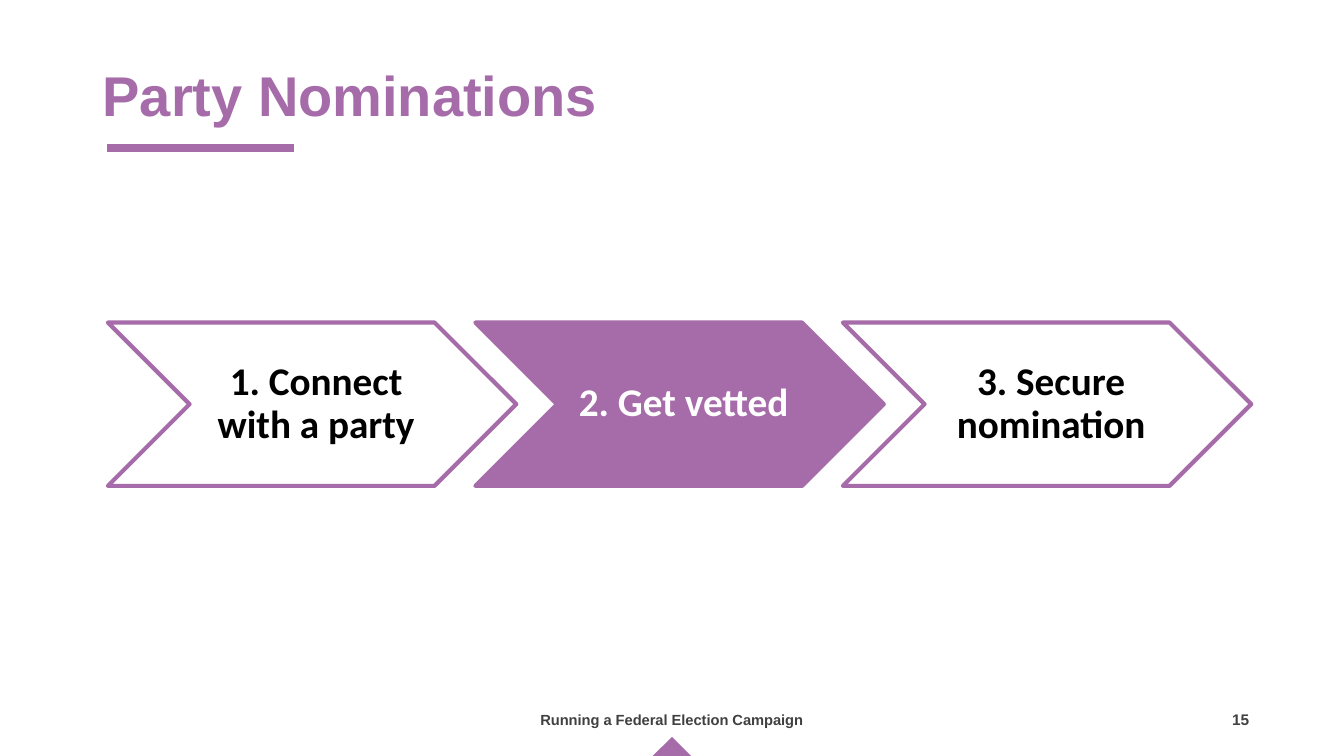
from dataclasses import dataclass

from pptx import Presentation
from pptx.dml.color import RGBColor
from pptx.enum.shapes import MSO_CONNECTOR, MSO_SHAPE
from pptx.enum.text import MSO_ANCHOR, PP_ALIGN
from pptx.oxml.ns import qn
from pptx.util import Inches, Pt

CHEVRON, TRIANGLE = MSO_SHAPE.CHEVRON, MSO_SHAPE.ISOSCELES_TRIANGLE
STRAIGHT = MSO_CONNECTOR.STRAIGHT
LEFT, CENTER = PP_ALIGN.LEFT, PP_ALIGN.CENTER
TOP, MIDDLE = MSO_ANCHOR.TOP, MSO_ANCHOR.MIDDLE


@dataclass(frozen=True)
class Theme:
    purple: RGBColor = RGBColor(0xA6, 0x6B, 0xA9)
    black: RGBColor = RGBColor(0, 0, 0)
    white: RGBColor = RGBColor(0xFF, 0xFF, 0xFF)
    grey: RGBColor = RGBColor(0x40, 0x40, 0x40)
    heading_font: str = "Arial"
    step_font: str = "Calibri"
    title_size: float = 40
    step_size: float = 28
    footer_size: float = 10.5
    number_size: float = 11
    rule_width: float = 6
    outline_width: float = 3


THEME = Theme()

STEPS = ["1. Connect with a party", "2. Get vetted", "3. Secure nomination"]
CURRENT_STEP = 1


def write(shape, text, font, size, color, align=CENTER, anchor=MIDDLE, spacing=1.0):
    """Put one bold paragraph into a shape or text box."""
    frame = shape.text_frame
    frame.word_wrap = True
    frame.vertical_anchor = anchor
    frame.text = text
    paragraph = frame.paragraphs[0]
    paragraph.alignment = align
    paragraph.line_spacing = spacing
    style = paragraph.runs[0].font
    style.name, style.size, style.bold = font, Pt(size), True
    style.color.rgb = color


def add_label(slide, box, text, size, color, **layout):
    label = slide.shapes.add_textbox(*map(Inches, box))
    write(label, text, THEME.heading_font, size, color, **layout)


def add_heading(slide, box, title):
    left, top, _, _ = box
    # Short rule under the title
    start, end, level = left + 0.14, left + 2, top + 1.07
    rule = slide.shapes.add_connector(
        STRAIGHT, Inches(start), Inches(level), Inches(end), Inches(level))
    rule.line.color.rgb = THEME.purple
    rule.line.width = Pt(THEME.rule_width)
    properties = rule._element.spPr
    properties.append(properties.makeelement(qn("a:effectLst"), {}))
    # Title
    add_label(slide, box, title, THEME.title_size, THEME.purple,
              align=LEFT, spacing=0.9)


def add_process(slide, box, steps, current):
    """Fill the box with chevrons, each overlapping the next by a tenth."""
    left, top, width, height = box
    step_width = width / (1 + 0.9 * (len(steps) - 1))
    for index, step in enumerate(steps):
        chevron = slide.shapes.add_shape(
            CHEVRON, Inches(left + index * 0.9 * step_width), Inches(top),
            Inches(step_width), Inches(height))
        chevron.shadow.inherit = False
        chevron.line.color.rgb = THEME.purple
        chevron.line.width = Pt(THEME.outline_width)
        # The current step is solid, the others are outlined
        if index == current:
            chevron.fill.solid()
            chevron.fill.fore_color.rgb = THEME.purple
        else:
            chevron.fill.background()
        frame = chevron.text_frame
        frame.margin_left = Inches(0.12)
        frame.margin_top = frame.margin_right = frame.margin_bottom = Inches(0.04)
        write(chevron, step, THEME.step_font, THEME.step_size,
              THEME.white if index == current else THEME.black, spacing=0.9)


def add_footer(slide, box, text, number):
    left, top, width, height = box
    # Campaign name and page number
    add_label(slide, (left + (width - 4.5) / 2, top, 4.5, 0.4), text,
              THEME.footer_size, THEME.grey)
    add_label(slide, (left + 11.85, top + 0.06, 0.91, 0.29), number,
              THEME.number_size, THEME.grey, anchor=TOP)
    # Marker on the bottom edge
    marker = slide.shapes.add_shape(
        TRIANGLE, Inches(left + (width - 0.4) / 2), Inches(top + height - 0.19),
        Inches(0.4), Inches(0.2))
    marker.shadow.inherit = False
    marker.fill.solid()
    marker.fill.fore_color.rgb = THEME.purple
    marker.line.fill.background()


def main():
    deck = Presentation()
    deck.slide_width, deck.slide_height = Inches(13.33), Inches(7.5)
    slide = deck.slides.add_slide(deck.slide_layouts[6])
    add_footer(slide, (0, 6.94, 13.33, 0.56),
               "Running a Federal Election Campaign", "15")
    add_heading(slide, (0.92, 0.4, 11.5, 1.15), "Party Nominations")
    add_process(slide, (1.07, 3.2, 11.34, 1.62), STEPS, CURRENT_STEP)
    deck.save("out.pptx")


if __name__ == "__main__":
    main()
